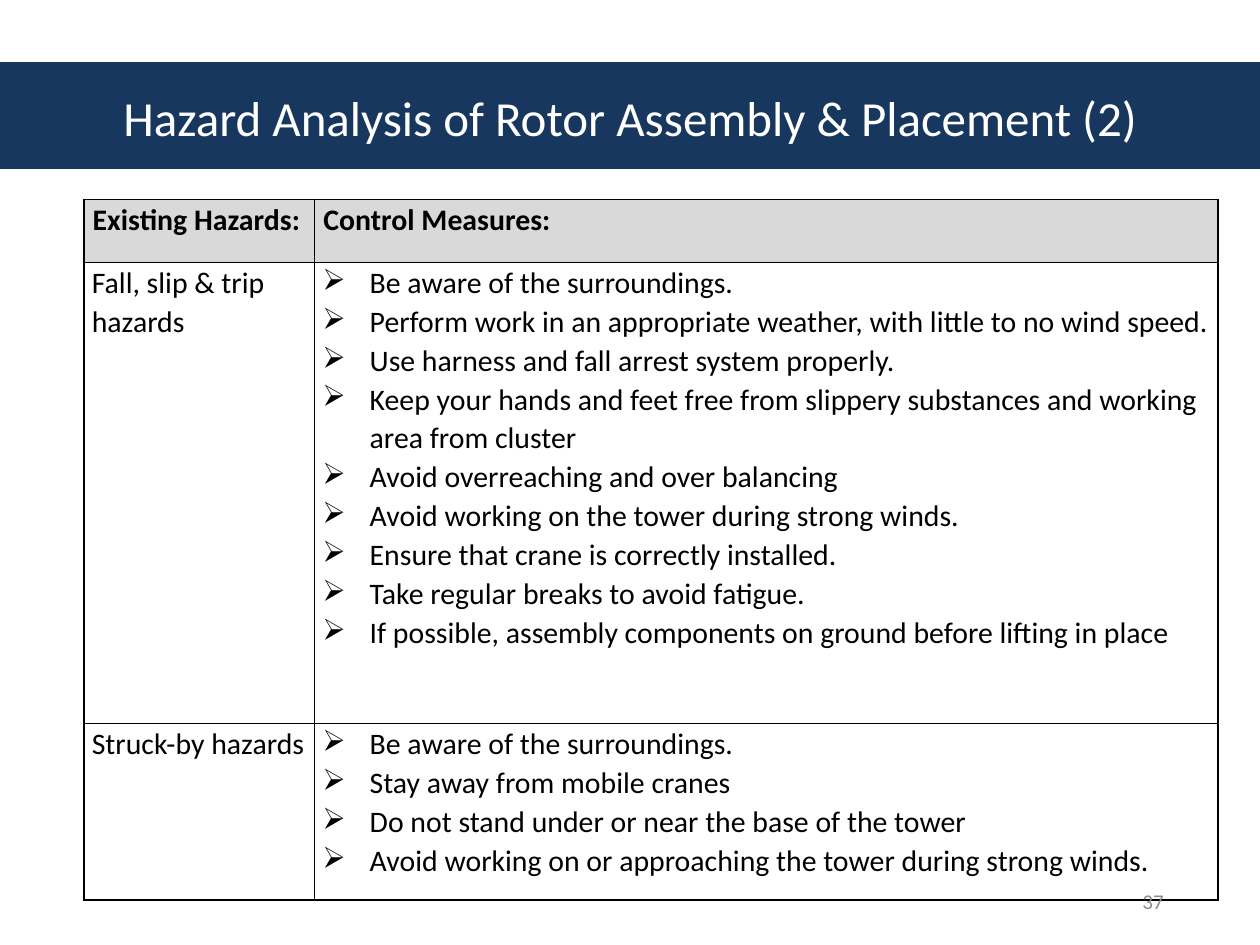
from lxml.etree import SubElement as Sub
from pptx import Presentation as Deck
from pptx.dml.color import RGBColor as Rgb
from pptx.enum.shapes import MSO_SHAPE as Form
from pptx.enum.text import MSO_ANCHOR as Anchor, PP_ALIGN as Align
from pptx.oxml import parse_xml
from pptx.oxml.ns import nsdecls, qn
from pptx.util import Pt

NAVY = Rgb(0x17, 0x37, 0x5E)
WHITE = Rgb(0xFF, 0xFF, 0xFF)
BLACK = Rgb(0x00, 0x00, 0x00)
LIGHT = Rgb(0xD9, 0xD9, 0xD9)
GRAY = Rgb(0x8C, 0x8C, 0x8C)

HEADS = ["Existing Hazards:", "Control Measures:"]
ROWS = [
    ("Fall, slip & trip hazards", [
        "Be aware of the surroundings.",
        "Perform work in an appropriate weather, with little to no wind speed.",
        "Use harness and fall arrest system properly.",
        "Keep your hands and feet free from slippery substances and working area from cluster",
        "Avoid overreaching and over balancing",
        "Avoid working on the tower during strong winds.",
        "Ensure that crane is correctly installed.",
        "Take regular breaks to avoid fatigue.",
        "If possible, assembly components on ground before lifting in place",
    ]),
    ("Struck-by hazards ", [
        "Be aware of the surroundings.",
        "Stay away from mobile cranes",
        "Do not stand under or near the base of the tower",
        "Avoid working on or approaching the tower during strong winds.",
    ]),
]
COLS = [131.8, 516.2]
HIGH = [36, 263.5, 100.8]


def apply(item, form):
    """Set each format value on the item."""
    for name, value in form.items():
        setattr(item, name, value)


def write(para, text, size, color, bold=False):
    """Add one styled run to a paragraph."""
    run = para.add_run()
    run.text = text
    apply(run.font, {"name": "Calibri", "size": Pt(size), "bold": bold})
    run.font.color.rgb = color


def label(slide, box, text, size, color, align):
    """Place a text box with one line of text."""
    frame = slide.shapes.add_textbox(*map(Pt, box)).text_frame
    apply(frame, {"word_wrap": True, "vertical_anchor": Anchor.MIDDLE})
    para = frame.paragraphs[0]
    para.alignment = align
    write(para, text, size, color)


def band(slide, box):
    """Draw the filled strip behind the title."""
    strip = slide.shapes.add_shape(Form.RECTANGLE, *map(Pt, box))
    strip.shadow.inherit = False
    strip.fill.solid()
    strip.fill.fore_color.rgb = strip.line.color.rgb = NAVY
    strip.line.width = Pt(0.75)


def bullet(para):
    """Give a paragraph an arrow bullet with a hanging indent."""
    props = para._p.get_or_add_pPr()
    props.set("marL", str(Pt(27)))
    props.set("indent", str(-Pt(27)))
    Sub(props, qn("a:buChar"), char="➢")


def border(cell):
    """Rule all four sides of a cell."""
    props = cell._tc.get_or_add_tcPr()
    for spot, side in enumerate("LRTB"):
        props.insert(spot, parse_xml(
            f'<a:ln{side} {nsdecls("a")} w="{Pt(1)}"><a:solidFill>'
            f'<a:srgbClr val="{BLACK}"/></a:solidFill></a:ln{side}>'))


def fill(cell, lines, head=False, marks=False):
    """Fill a cell with paragraphs, a ground and borders."""
    inset = Pt(5 if head else 4.5)
    apply(cell, {"margin_left": inset, "margin_right": inset,
                 "margin_top": 0, "margin_bottom": 0})
    cell.fill.solid()
    cell.fill.fore_color.rgb = LIGHT if head else WHITE
    frame = cell.text_frame
    for spot, line in enumerate(lines):
        para = frame.add_paragraph() if spot else frame.paragraphs[0]
        para.line_spacing = 1.07
        if marks:
            bullet(para)
        write(para, line, 17, BLACK, head)
    border(cell)


def grid(slide, left, top):
    """Build the table of hazards and measures."""
    table = slide.shapes.add_table(
        len(HIGH), len(COLS), Pt(left), Pt(top),
        Pt(sum(COLS)), Pt(sum(HIGH))).table
    apply(table, {"first_row": False, "horz_banding": False})
    for col, wide in zip(table.columns, COLS):
        col.width = Pt(wide)
    for row, high in zip(table.rows, HIGH):
        row.height = Pt(high)
    for col, head in enumerate(HEADS):
        fill(table.cell(0, col), [head], head=True)
    for row, (hazard, steps) in enumerate(ROWS, 1):
        fill(table.cell(row, 0), [hazard])
        fill(table.cell(row, 1), steps, marks=True)


def main():
    """Build and save the slide."""
    deck = Deck()
    apply(deck, {"slide_width": Pt(720), "slide_height": Pt(540)})
    slide = deck.slides.add_slide(deck.slide_layouts[6])
    band(slide, (0, 36, 720, 60))
    label(slide, (36, 21.6, 648, 90),
          "Hazard Analysis of Rotor Assembly & Placement (2)",
          28, WHITE, Align.CENTER)
    grid(slide, 48, 114)
    label(slide, (504, 500.5, 168, 28.8), "37", 12, GRAY, Align.RIGHT)
    deck.save("out.pptx")


if __name__ == "__main__":
    main()
